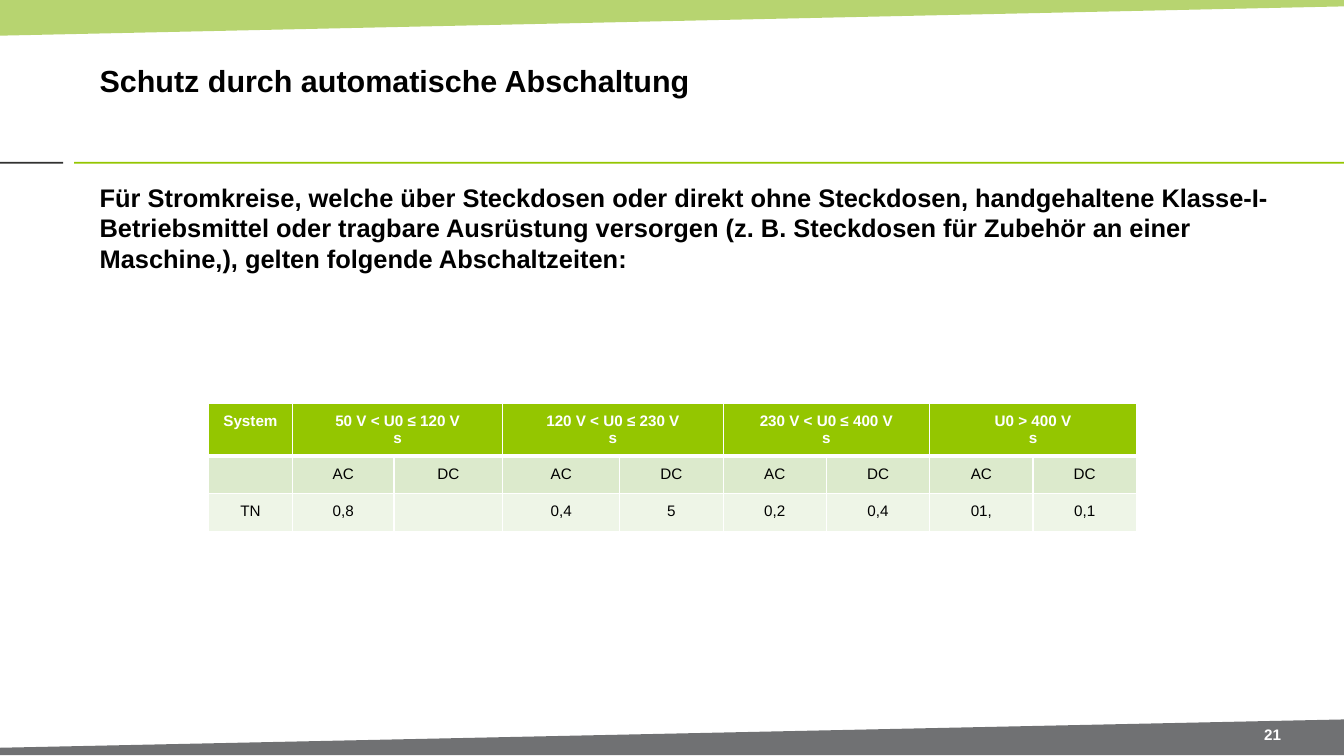
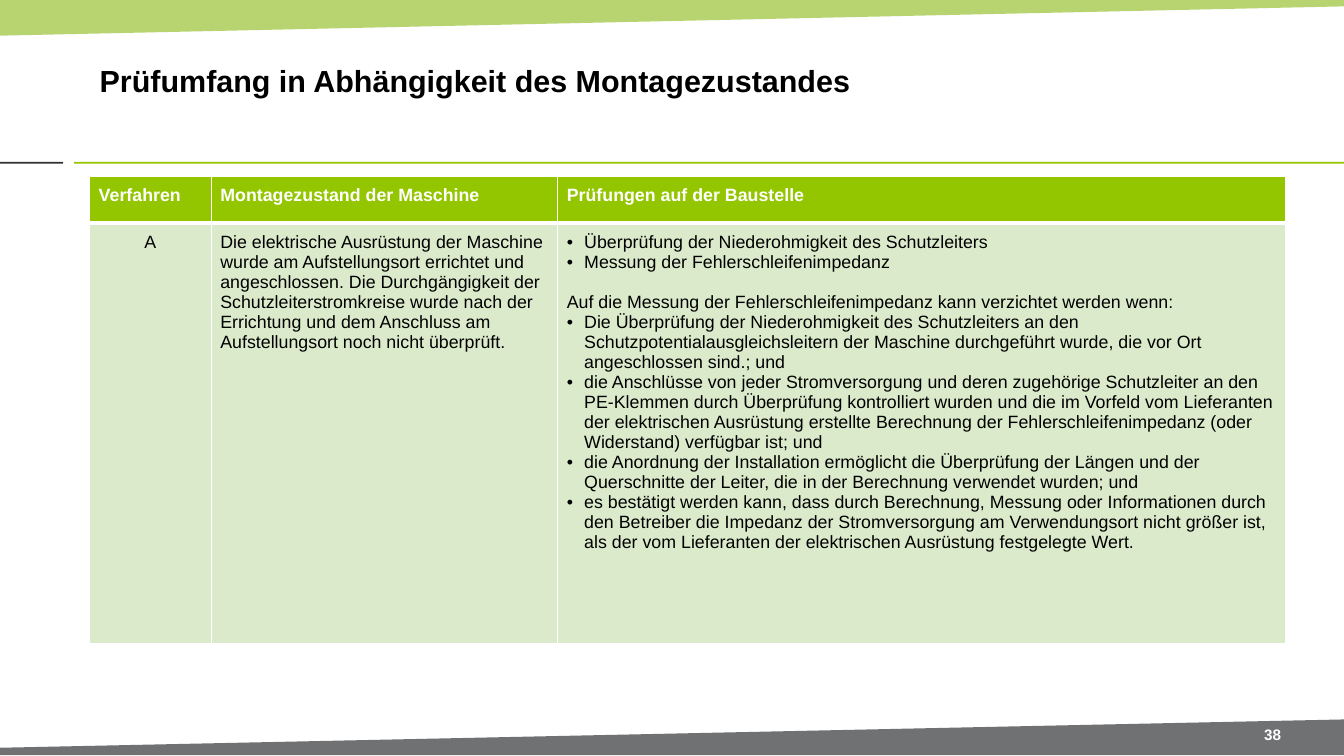
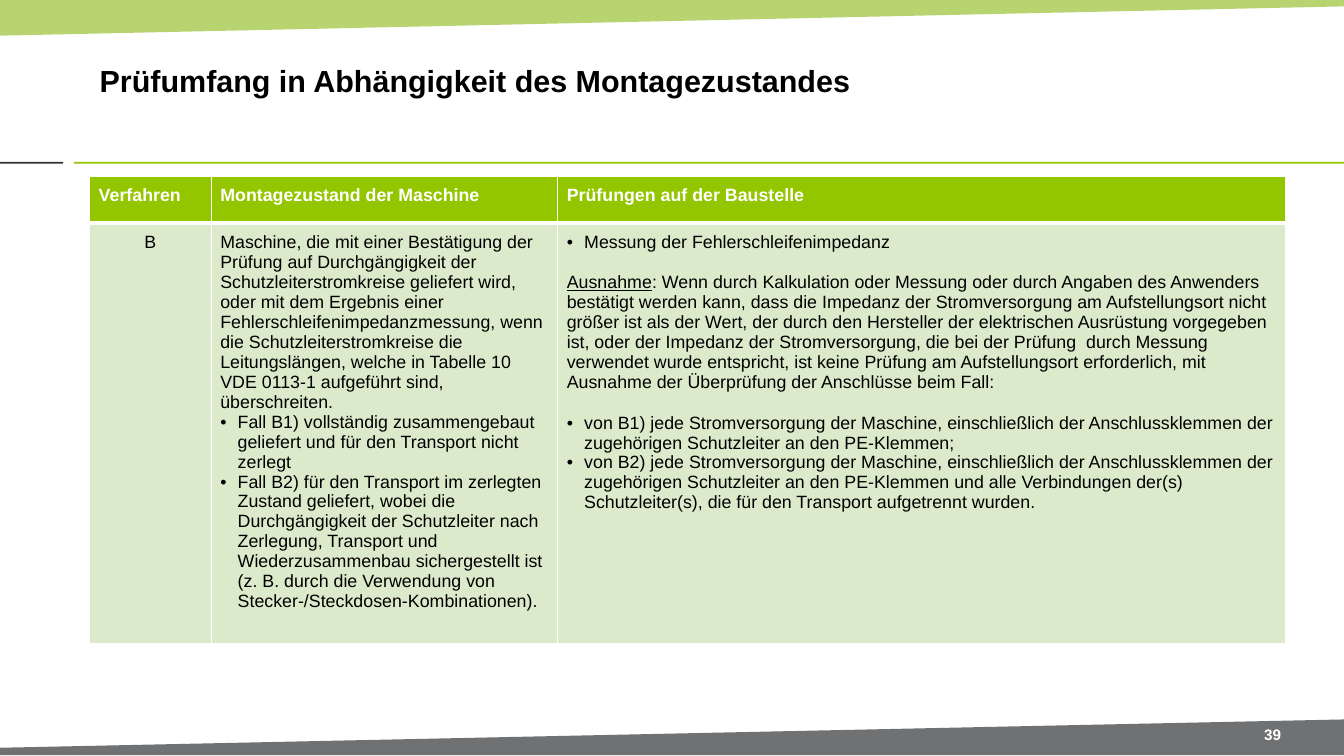
from dataclasses import dataclass

from lxml import etree
from pptx import Presentation
from pptx.dml.color import RGBColor
from pptx.enum.shapes import MSO_SHAPE
from pptx.enum.text import MSO_ANCHOR, MSO_AUTO_SIZE, PP_ALIGN
from pptx.oxml.ns import qn
from pptx.util import Inches, Pt

RECT = MSO_SHAPE.RECTANGLE
MIDDLE, TOP = MSO_ANCHOR.MIDDLE, MSO_ANCHOR.TOP
LEFT, CENTER = PP_ALIGN.LEFT, PP_ALIGN.CENTER
NO_FIT = MSO_AUTO_SIZE.NONE

WIDTH, HEIGHT = 14.7, 8.27
FONT = "Arial"
GREEN, LIGHT_GREEN, GRAY, DARK = "94C600", "95C02A", "707173", "313130"
ROW_TINTS = ["DCEACC", "EEF5E7"]
WHITE, BLACK = "FFFFFF", "000000"

TITLE_BOX = (0.98, 0.28, 11.54, 1.19)
BODY_BOX = (0.98, 1.93, 13.09, 5.42)
NUMBER_BOX = (13.49, 7.89, 0.86, 0.29)

BANDS = [
    ([(0, 0), (WIDTH, 0), (WIDTH, 0.07), (0, 0.39)], LIGHT_GREEN, 67),
    ([(WIDTH, 8.26), (0, 8.26), (0, 8.18), (WIDTH, 7.87)], GRAY, 100),
]
RULES = [((0, 1.77, 0.69, 0.02), DARK), ((0.81, 1.77, 13.89, 0.02), GREEN)]


@dataclass
class Para:
    text: str
    bullet: bool = False
    gap: bool = False
    underlined: str = ""


def bullets(*texts):
    return [Para(text, bullet=True) for text in texts]


INTRO = (
    "Für Stromkreise, welche über Steckdosen oder direkt ohne Steckdosen, "
    "handgehaltene Klasse-I-Betriebsmittel oder tragbare Ausrüstung versorgen "
    "(z. B. Steckdosen für Zubehör an einer Maschine,), gelten folgende Abschaltzeiten:"
)
VOLTAGES = ["50 V < U0 ≤ 120 V", "120 V < U0 ≤ 230 V", "230 V < U0 ≤ 400 V", "U0 > 400 V"]
TIMES = ["0,8", "", "0,4", "5", "0,2", "0,4", "01,", "0,1"]

time_header = ["System"]
for voltage in VOLTAGES:
    time_header += [[Para(voltage), Para("s")], ""]

TIME_TABLE = dict(
    at=(2.28, 4.41),
    cols=[0.92, 1.11, 1.19, 1.28] + [1.13] * 5,
    heights=[0.58, 0.41, 0.41],
    rows=[time_header, [""] + ["AC", "DC"] * 4, ["TN"] + TIMES],
    size=12,
    merges=[(0, col, 0, col + 1) for col in range(1, 9, 2)],
    centered=lambda row, col: True,
)


def test_table(procedure, condition, tests):
    return dict(
        at=BODY_BOX[:2],
        cols=[1.33, 3.79, 7.96],
        heights=[0.51, 4.6],
        rows=[
            ["Verfahren", "Montagezustand der Maschine", "Prüfungen auf der Baustelle"],
            [procedure, condition, tests],
        ],
        size=14,
        merges=[],
        centered=lambda row, col: row > 0 and col == 0,
    )


TABLE_A = test_table(
    "A",
    "Die elektrische Ausrüstung der Maschine wurde am Aufstellungsort errichtet und "
    "angeschlossen. Die Durchgängigkeit der Schutzleiterstromkreise wurde nach der "
    "Errichtung und dem Anschluss am Aufstellungsort noch nicht überprüft.",
    bullets(
        "Überprüfung der Niederohmigkeit des Schutzleiters",
        "Messung der Fehlerschleifenimpedanz",
    )
    + [Para("Auf die Messung der Fehlerschleifenimpedanz kann verzichtet werden wenn:", gap=True)]
    + bullets(
        "Die Überprüfung der Niederohmigkeit des Schutzleiters an den "
        "Schutzpotentialausgleichsleitern der Maschine durchgeführt wurde, die vor Ort "
        "angeschlossen sind.; und",
        "die Anschlüsse von jeder Stromversorgung und deren zugehörige Schutzleiter an den "
        "PE-Klemmen durch Überprüfung kontrolliert wurden und die im Vorfeld vom Lieferanten "
        "der elektrischen Ausrüstung erstellte Berechnung der Fehlerschleifenimpedanz (oder "
        "Widerstand) verfügbar ist; und",
        "die Anordnung der Installation ermöglicht die Überprüfung der Längen und der "
        "Querschnitte der Leiter, die in der Berechnung verwendet wurden; und",
        "es bestätigt werden kann, dass durch Berechnung, Messung oder Informationen durch "
        "den Betreiber die Impedanz der Stromversorgung am Verwendungsort nicht größer ist, "
        "als der vom Lieferanten der elektrischen Ausrüstung festgelegte Wert.",
    ),
)

TABLE_B = test_table(
    "B",
    [
        Para(
            "Maschine, die mit einer Bestätigung der Prüfung auf Durchgängigkeit der "
            "Schutzleiterstromkreise geliefert wird, oder mit dem Ergebnis einer "
            "Fehlerschleifenimpedanzmessung, wenn die Schutzleiterstromkreise die "
            "Leitungslängen, welche in Tabelle 10 VDE 0113-1 aufgeführt sind, überschreiten."
        )
    ]
    + bullets(
        "Fall B1) vollständig zusammengebaut geliefert und für den Transport nicht zerlegt",
        "Fall B2) für den Transport im zerlegten Zustand geliefert, wobei die "
        "Durchgängigkeit der Schutzleiter nach Zerlegung, Transport und Wiederzusammenbau "
        "sichergestellt ist (z. B. durch die Verwendung von "
        "Stecker-/Steckdosen-Kombinationen).",
    ),
    [
        Para("Messung der Fehlerschleifenimpedanz", bullet=True),
        Para(
            ": Wenn durch Kalkulation oder Messung oder durch Angaben des Anwenders bestätigt "
            "werden kann, dass die Impedanz der Stromversorgung am Aufstellungsort nicht größer "
            "ist als der Wert, der durch den Hersteller der elektrischen Ausrüstung vorgegeben "
            "ist, oder der Impedanz der Stromversorgung, die bei der Prüfung  durch Messung "
            "verwendet wurde entspricht, ist keine Prüfung am Aufstellungsort erforderlich, mit "
            "Ausnahme der Überprüfung der Anschlüsse beim Fall:",
            gap=True,
            underlined="Ausnahme",
        ),
        Para(
            "von B1) jede Stromversorgung der Maschine, einschließlich der Anschlussklemmen "
            "der zugehörigen Schutzleiter an den PE-Klemmen;",
            bullet=True,
            gap=True,
        ),
        Para(
            "von B2) jede Stromversorgung der Maschine, einschließlich der Anschlussklemmen "
            "der zugehörigen Schutzleiter an den PE-Klemmen und alle Verbindungen der(s) "
            "Schutzleiter(s), die für den Transport aufgetrennt wurden.",
            bullet=True,
        ),
    ],
)

SCOPE_TITLE = "Prüfumfang in Abhängigkeit des Montagezustandes"
SLIDES = [
    ("Schutz durch automatische Abschaltung", "21", INTRO, TIME_TABLE),
    (SCOPE_TITLE, "38", None, TABLE_A),
    (SCOPE_TITLE, "39", None, TABLE_B),
]


def rgb(color):
    return RGBColor.from_string(color)


def inches(values):
    return [Inches(v) for v in values]


def paint(shape, color, opacity=100):
    shape.shadow.inherit = False
    shape.line.fill.background()
    shape.fill.solid()
    shape.fill.fore_color.rgb = rgb(color)
    if opacity < 100:
        clr = shape.element.spPr.find(".//" + qn("a:srgbClr"))
        etree.SubElement(clr, qn("a:alpha"), val=str(opacity * 1000))


def style_run(r, size, color, bold):
    r.font.name = FONT
    r.font.size = Pt(size)
    r.font.bold = bold
    r.font.color.rgb = rgb(color)


def set_bullet(p, char=None, indent=0):
    pPr = p._p.get_or_add_pPr()
    pPr.set("marL", str(Inches(indent)))
    pPr.set("indent", str(-Inches(indent)))
    if char:
        etree.SubElement(pPr, qn("a:buFont"), typeface=FONT)
        etree.SubElement(pPr, qn("a:buChar"), char=char)
    else:
        etree.SubElement(pPr, qn("a:buNone"))


def fill_box(shape, box, text, size, color, anchor, align):
    shape.left, shape.top, shape.width, shape.height = inches(box)
    tf = shape.text_frame
    tf.text = text
    tf.word_wrap = True
    tf.auto_size = NO_FIT
    tf.vertical_anchor = anchor
    tf.margin_left = tf.margin_right = Inches(0.11)
    tf.margin_top = tf.margin_bottom = Inches(0.06)
    p = tf.paragraphs[0]
    set_bullet(p)
    p.alignment = align
    p.space_before = Pt(0)
    style_run(p.runs[0], size, color, True)


def fill_cell(cell, content, size, color, bold, align):
    cell.margin_left = cell.margin_right = Inches(0.1)
    cell.margin_top = cell.margin_bottom = Inches(0.1)
    paras = [Para(content)] if isinstance(content, str) else content
    tf = cell.text_frame
    for i, para in enumerate(paras):
        p = tf.add_paragraph() if i else tf.paragraphs[0]
        if para.bullet:
            set_bullet(p, "•", 0.19)
        p.alignment = align
        if para.gap:
            p.space_before = Pt(size * 1.15)
        for text, underline in ((para.underlined, True), (para.text, None)):
            if text:
                r = p.add_run()
                r.text = text
                style_run(r, size, color, bold)
                r.font.underline = underline


def set_borders(cell, top, bottom):
    tcPr = cell._tc.get_or_add_tcPr()
    for side, width in (("L", 1), ("R", 1), ("T", top), ("B", bottom)):
        ln = etree.SubElement(tcPr, qn("a:ln" + side), w=str(Pt(width)))
        solid = etree.SubElement(ln, qn("a:solidFill"))
        etree.SubElement(solid, qn("a:srgbClr"), val=WHITE)


def add_table(s, at, cols, heights, rows, size, merges, centered):
    box = (*at, sum(cols), sum(heights))
    table = s.shapes.add_table(len(rows), len(cols), *inches(box)).table
    table.horz_banding = False
    for column, width in zip(table.columns, cols):
        column.width = Inches(width)
    for i, (row, height) in enumerate(zip(rows, heights)):
        table.rows[i].height = Inches(height)
        header = i == 0
        for j, content in enumerate(row):
            cell = table.cell(i, j)
            set_borders(cell, 3 if i == 1 else 1, 3 if header else 1)
            cell.fill.solid()
            cell.fill.fore_color.rgb = rgb(GREEN if header else ROW_TINTS[i - 1])
            if content:
                align = CENTER if centered(i, j) else LEFT
                fill_cell(cell, content, size, WHITE if header else BLACK, header, align)
    for top, left, bottom, right in merges:
        table.cell(top, left).merge(table.cell(bottom, right))


def decorate_master(prs, s):
    decorations = []
    for points, color, opacity in BANDS:
        corners = [inches(point) for point in points]
        builder = s.shapes.build_freeform(*corners[0])
        builder.add_line_segments(corners[1:], close=True)
        band = builder.convert_to_shape()
        paint(band, color, opacity)
        decorations.append(band)
    for box, color in RULES:
        rule = s.shapes.add_shape(RECT, *inches(box))
        paint(rule, color)
        decorations.append(rule)
    tree = prs.slide_master.shapes.element
    for i, shape in enumerate(decorations):
        shape.element.nvSpPr.cNvPr.set("id", str(100 + i))
        tree.insert(2 + i, shape.element)


def main():
    prs = Presentation()
    prs.slide_width, prs.slide_height = inches((WIDTH, HEIGHT))
    title_and_body, title_only = prs.slide_layouts[1], prs.slide_layouts[5]
    for i, (title, number, body, table) in enumerate(SLIDES):
        s = prs.slides.add_slide(title_and_body if body else title_only)
        if i == 0:
            decorate_master(prs, s)
        fill_box(s.shapes.title, TITLE_BOX, title, 24, BLACK, MIDDLE, LEFT)
        number_box = s.shapes.add_textbox(*inches(NUMBER_BOX))
        fill_box(number_box, NUMBER_BOX, number, 12, WHITE, MIDDLE, CENTER)
        if body:
            fill_box(s.placeholders[1], BODY_BOX, body, 20, BLACK, TOP, LEFT)
        add_table(s, **table)
    prs.save("out.pptx")


if __name__ == "__main__":
    main()
